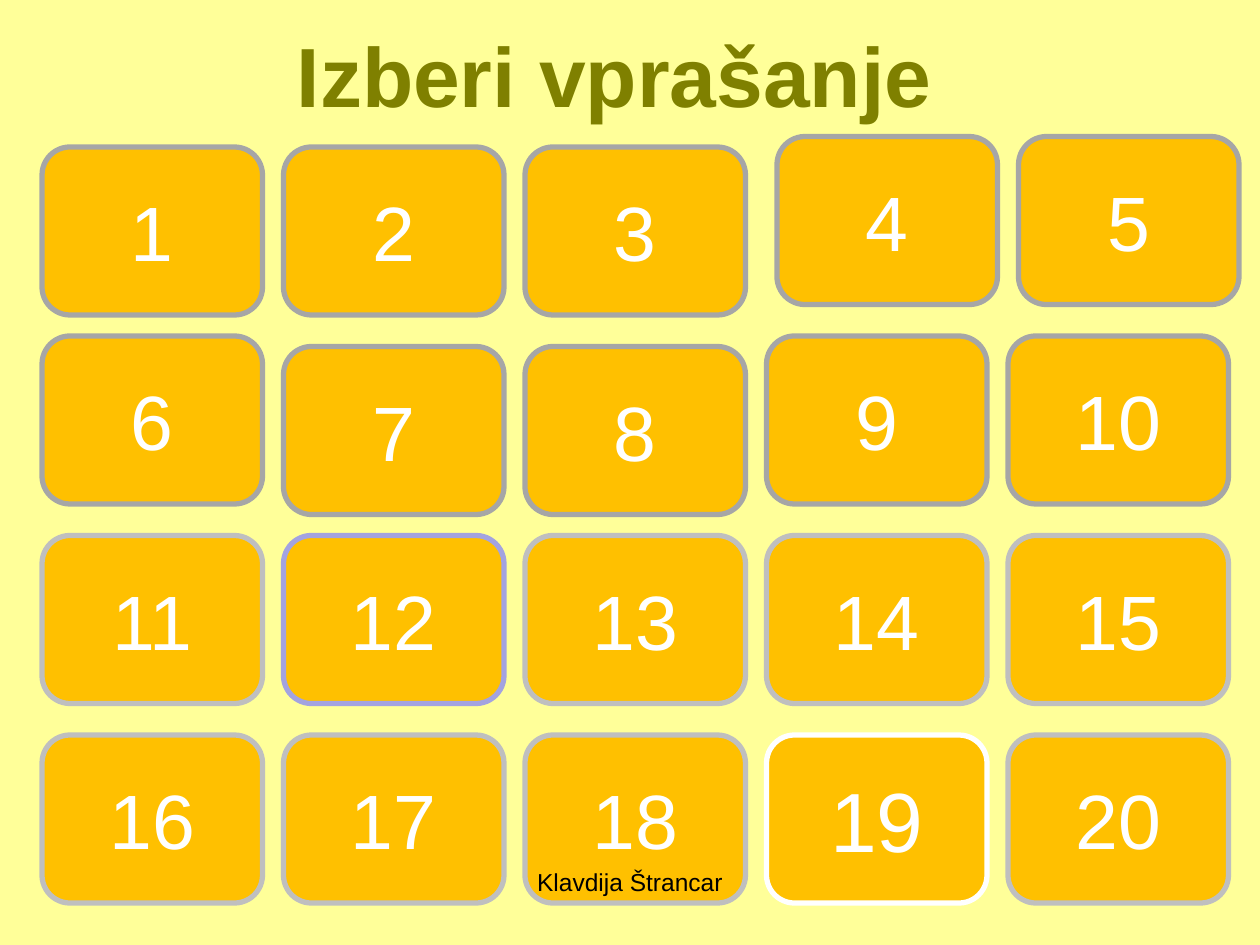
from pptx import Presentation
from pptx.dml.color import RGBColor
from pptx.enum.shapes import MSO_SHAPE as Shape
from pptx.enum.text import MSO_ANCHOR as Anchor, PP_ALIGN as Align
from pptx.util import Inches, Pt

CREAM = RGBColor(0xFF, 0xFF, 0x99)
OLIVE = RGBColor(0x7F, 0x80, 0x00)
AMBER = RGBColor(0xFF, 0xC0, 0x00)
GREY = RGBColor(0xA6, 0xA6, 0xA6)
SILVER = RGBColor(0xBF, 0xBF, 0xBF)
LILAC = RGBColor(0xA3, 0xA3, 0xE0)
WHITE = RGBColor(0xFF, 0xFF, 0xFF)
BLACK = RGBColor(0x00, 0x00, 0x00)

GRID_COLUMNS, GRID_ROWS = 120, 90
CARDS_PER_ROW, CARD_COUNT = 5, 20
CARD_LEFT, CARD_PITCH = 4, 23
CARD_WIDTH, CARD_HEIGHT = 21, 16
ROW_TOPS = (14, 32, 51, 70)
ROW_BORDERS = (GREY, GREY, SILVER, SILVER)
NUDGES = {4: (1, -1), 5: (1, -1), 7: (0, 1), 8: (0, 1)}
SPECIAL_BORDERS = {12: LILAC, 19: WHITE}
SPECIAL_SIZES = {19: 48}


class QuestionBoard:
    """Draws styled elements on one slide, measured in grid columns and rows."""

    font_name = "Arial"

    def __init__(self, deck):
        self.column = deck.slide_width / GRID_COLUMNS
        self.row = deck.slide_height / GRID_ROWS
        self.slide = deck.slides.add_slide(deck.slide_layouts[5])
        self.slide.background.fill.solid()
        self.slide.background.fill.fore_color.rgb = CREAM

    def box(self, left, top, width, height):
        return (round(left * self.column), round(top * self.row),
                round(width * self.column), round(height * self.row))

    def set_text(self, holder, text, size, color, anchor, wrap=True, bold=False):
        frame = holder.text_frame
        frame.text = text
        frame.vertical_anchor = anchor
        frame.word_wrap = wrap
        line = frame.paragraphs[0]
        line.alignment = Align.CENTER
        line.font.name = self.font_name
        line.font.size = Pt(size)
        line.font.bold = bold
        line.font.color.rgb = color

    def title(self, text, *area):
        heading = self.slide.shapes.title
        heading.left, heading.top, heading.width, heading.height = self.box(*area)
        self.set_text(heading, text, 48, OLIVE, Anchor.MIDDLE, bold=True)

    def card(self, number, left, top, border, size):
        area = self.box(left, top, CARD_WIDTH, CARD_HEIGHT)
        card = self.slide.shapes.add_shape(Shape.ROUNDED_RECTANGLE, *area)
        card.shadow.inherit = False
        card.fill.solid()
        card.fill.fore_color.rgb = AMBER
        card.line.color.rgb = border
        card.line.width = Pt(3)
        self.set_text(card, str(number), size, WHITE, Anchor.MIDDLE, wrap=False)

    def caption(self, text, *area):
        caption = self.slide.shapes.add_textbox(*self.box(*area))
        self.set_text(caption, text, 14, BLACK, Anchor.TOP)


def main():
    deck = Presentation()
    deck.slide_width, deck.slide_height = Inches(10), Inches(7.5)
    board = QuestionBoard(deck)
    board.title("Izberi vprašanje", 6, 0, 105, 14)
    for number in range(1, CARD_COUNT + 1):
        row, column = divmod(number - 1, CARDS_PER_ROW)
        shift_x, shift_y = NUDGES.get(number, (0, 0))
        board.card(number,
                   CARD_LEFT + column * CARD_PITCH + shift_x,
                   ROW_TOPS[row] + shift_y,
                   SPECIAL_BORDERS.get(number, ROW_BORDERS[row]),
                   SPECIAL_SIZES.get(number, 44))
    board.caption("Klavdija Štrancar", 41, 82, 38, 6.25)
    deck.save("out.pptx")


if __name__ == "__main__":
    main()
